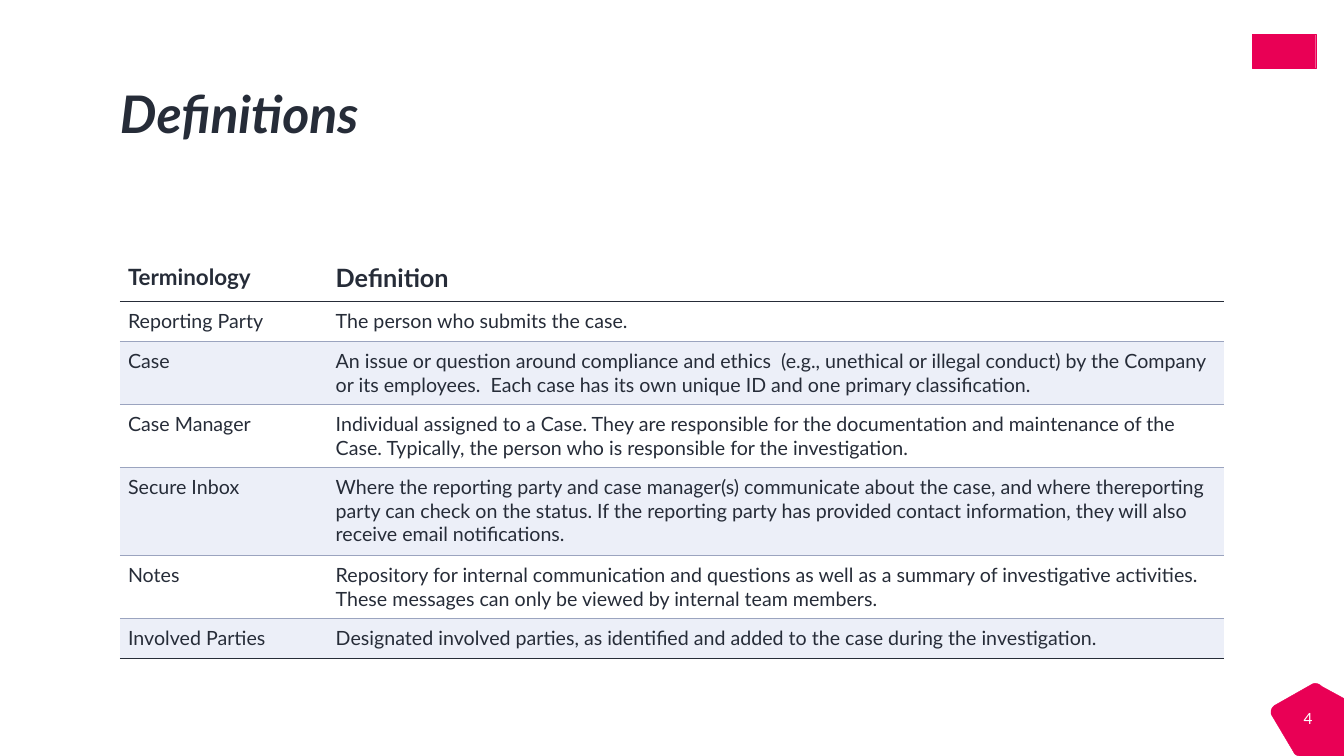
from dataclasses import dataclass

from lxml import etree
from pptx import Presentation
from pptx.dml.color import RGBColor
from pptx.enum.shapes import MSO_SHAPE
from pptx.enum.text import MSO_ANCHOR, PP_ALIGN
from pptx.oxml.ns import qn
from pptx.util import Inches, Pt

RECT = MSO_SHAPE.RECTANGLE
TOP, BOTTOM = MSO_ANCHOR.TOP, MSO_ANCHOR.BOTTOM
LEFT, RIGHT = PP_ALIGN.LEFT, PP_ALIGN.RIGHT

FONT = "Lato"
DARK, WHITE, PINK, BAND, RULE = "262C38", "FFFFFF", "E90055", "ECEFF8", "9BA4BF"
CELL_INSET = 0.08


@dataclass
class Term:
    name: str
    definition: str
    height: float
    size: int = 14


@dataclass
class Curve:
    """Straight line to start, then a cubic curve through two controls to end."""
    start: tuple[float, float]
    c1: tuple[float, float]
    c2: tuple[float, float]
    end: tuple[float, float]


TERMS = [
    Term("Reporting Party", "The person who submits the case.", 0.39),
    Term("Case", "An issue or question around compliance and ethics  (e.g., unethical or "
         "illegal conduct) by the Company or its employees.  Each case has its own unique "
         "ID and one primary classification.", 0.62),
    Term("Case Manager", "Individual assigned to a Case. They are responsible for the "
         "documentation and maintenance of the Case. Typically, the person who is "
         "responsible for the investigation.", 0.62),
    Term("Secure Inbox", "Where the reporting party and case manager(s) communicate about "
         "the case, and where thereporting party can check on the status. If the reporting "
         "party has provided contact information, they will also receive email "
         "notifications.", 0.87),
    Term("Notes", "Repository for internal communication and questions as well as a summary "
         "of investigative activities. These messages can only be viewed by internal team "
         "members.", 0.62),
    Term("Involved Parties", "Designated involved parties, as identified and added to the "
         "case during the investigation.", 0.39),
]

# Rounded corners of the page badge, which runs off the bottom right
BADGE_CORNERS = [
    Curve((12.9, 7.5), (12.87, 7.5), (12.84, 7.49), (12.83, 7.46)),
    Curve((12.61, 7.09), (12.6, 7.06), (12.61, 7.02), (12.64, 7.0)),
    Curve((13.01, 6.79), (13.04, 6.77), (13.08, 6.78), (13.11, 6.81)),
]


def color(value: str) -> RGBColor:
    return RGBColor.from_string(value)


def write(tf, text: str, *, size: float, fill: str = DARK, bold: bool = False,
          italic: bool = False, align=LEFT, spacing: float = 1.0) -> None:
    p = tf.paragraphs[0]
    p.alignment, p.line_spacing = align, spacing
    r = p.add_run()
    r.text = text
    f = r.font
    f.name, f.size, f.bold, f.italic = FONT, Pt(size), bold, italic
    f.color.rgb = color(fill)


def frame(tf, *, anchor=TOP, right: float = 0, bottom: float = 0) -> None:
    tf.word_wrap = True
    tf.vertical_anchor = anchor
    tf.margin_left = tf.margin_top = 0
    tf.margin_right, tf.margin_bottom = Inches(right), Inches(bottom)


def paint(sp, fill: str) -> None:
    sp.shadow.inherit = False
    sp.fill.solid()
    sp.fill.fore_color.rgb = color(fill)
    sp.line.color.rgb = color(fill)
    sp.line.width = Pt(0.25)


def borders(cell, top: tuple[str, float] | None, bottom: tuple[str, float]) -> None:
    sides = {"a:lnL": None, "a:lnR": None, "a:lnT": top, "a:lnB": bottom}
    for i, (tag, rule) in enumerate(sides.items()):
        ln = etree.Element(qn(tag))
        if rule:
            ln.set("w", str(Pt(rule[1])))
            fill = etree.SubElement(ln, qn("a:solidFill"))
            etree.SubElement(fill, qn("a:srgbClr"), val=rule[0])
        else:
            ln.set("w", "0")
            etree.SubElement(ln, qn("a:noFill"))
        cell._tc.get_or_add_tcPr().insert(i, ln)


def add_terms(s, rows: list[Term]) -> None:
    widths = (2.06, 8.89)
    table = s.shapes.add_table(len(rows), 2, Inches(1.19), Inches(2.53), Inches(sum(widths)),
                               Inches(sum(row.height for row in rows))).table
    table.first_row = table.horz_banding = False
    for column, width in zip(table.columns, widths):
        column.width = Inches(width)
    thin, strong = (RULE, 0.5), (DARK, 1)
    last = len(rows) - 1
    for i, row in enumerate(rows):
        table.rows[i].height = Inches(row.height)
        top = None if i == 0 else strong if i == 1 else thin
        bottom = strong if i in (0, last) else thin
        for j, text in enumerate((row.name, row.definition)):
            cell = table.cell(i, j)
            cell.margin_left = cell.margin_right = Inches(CELL_INSET)
            cell.margin_top = cell.margin_bottom = Inches(CELL_INSET)
            cell.fill.solid()
            cell.fill.fore_color.rgb = color(BAND if i and i % 2 == 0 else WHITE)
            borders(cell, top, bottom)
            size = 16 if (i, j) == (0, 0) else row.size
            write(cell.text_frame, text, size=size, bold=i == 0)


def bezier(c: Curve, steps: int = 8) -> list[tuple[float, float]]:
    points = []
    for k in range(steps + 1):
        t = k / steps
        u = 1 - t
        weights = (u**3, 3 * u * u * t, 3 * u * t * t, t**3)
        controls = (c.start, c.c1, c.c2, c.end)
        points.append((sum(w * q[0] for w, q in zip(weights, controls)),
                       sum(w * q[1] for w, q in zip(weights, controls))))
    return points


def add_badge(s, number: str) -> None:
    points = [(13.33, 7.5)]
    for corner in BADGE_CORNERS:
        points += bezier(corner)
    points.append((13.33, 6.93))
    emu = [(Inches(x), Inches(y)) for x, y in points]
    builder = s.shapes.build_freeform(*emu[0])
    builder.add_line_segments(emu[1:], close=True)
    sp = builder.convert_to_shape()
    paint(sp, PINK)
    frame(sp.text_frame, anchor=BOTTOM, right=0.31, bottom=0.28)
    write(sp.text_frame, number, size=11, fill=WHITE, align=RIGHT)


def main() -> None:
    prs = Presentation()
    prs.slide_width, prs.slide_height = Inches(13.33), Inches(7.5)
    s = prs.slides.add_slide(prs.slide_layouts[6])

    # Plain block in the top right corner
    sp = s.shapes.add_shape(RECT, Inches(12.42), Inches(0.34), Inches(0.63), Inches(0.34))
    paint(sp, PINK)

    # Title
    title = s.shapes.add_textbox(Inches(1.19), Inches(0.86), Inches(10.94), Inches(0.66))
    frame(title.text_frame)
    write(title.text_frame, "Definitions", size=37, bold=True, italic=True, spacing=0.95)

    # Page badge and table of terms
    add_badge(s, "4")
    add_terms(s, [Term("Terminology", "Definition", 0.46, 18), *TERMS])

    prs.save("out.pptx")


if __name__ == "__main__":
    main()
